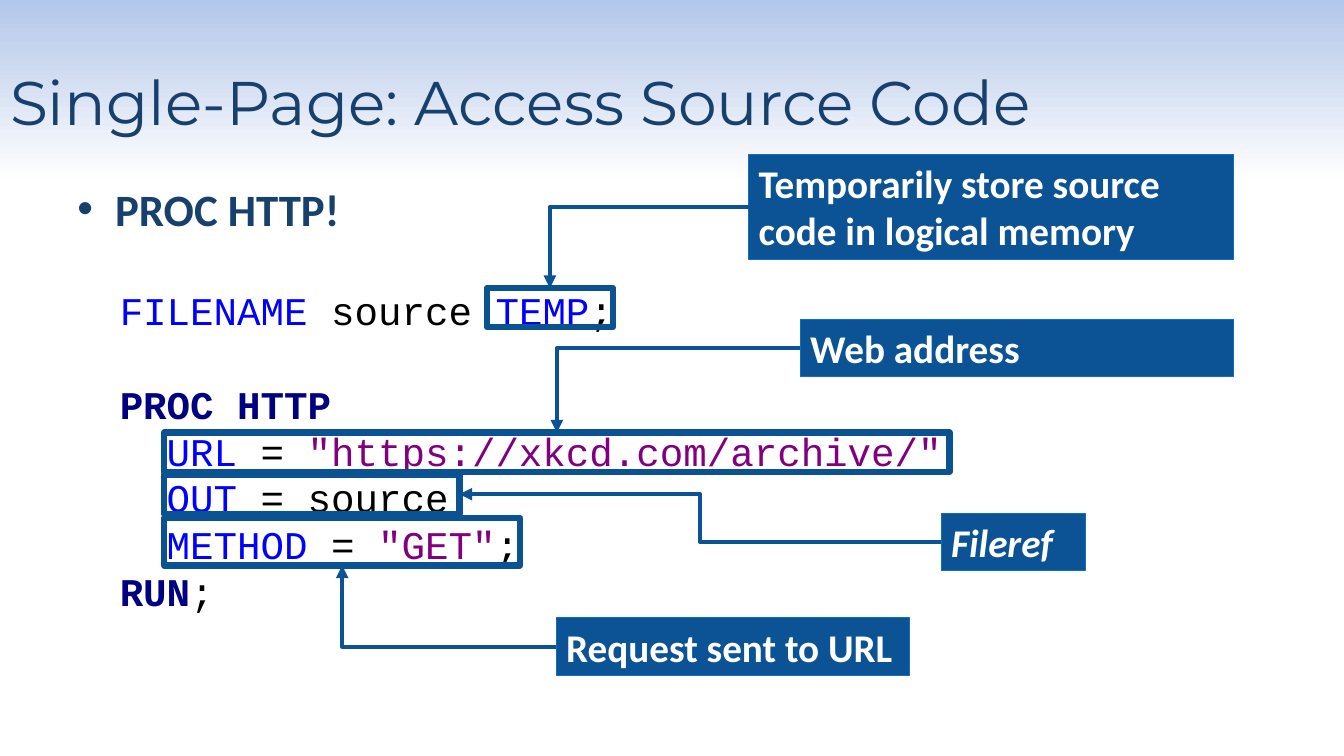
from dataclasses import dataclass

from lxml.etree import SubElement
from pptx import Presentation
from pptx.dml.color import RGBColor as Color
from pptx.enum.shapes import MSO_CONNECTOR as Link, MSO_SHAPE as Shape
from pptx.enum.text import MSO_ANCHOR as Anchor, PP_ALIGN as Align
from pptx.oxml.ns import qn
from pptx.util import Cm, Pt


@dataclass(frozen=True)
class Theme:
    heading_font: str = "Montserrat"
    body_font: str = "Calibri"
    code_font: str = "Courier New"
    heading_size: float = 44
    bullet_size: float = 32
    text_size: float = 28
    code_pitch: float = 33.5
    ink: str = "17406D"
    white: str = "FFFFFF"
    callout: str = "0B5394"
    callout_edge: str = "0F6FC6"
    frame: str = "0B5292"
    keyword: str = "0000FF"
    step: str = "000080"
    plain: str = "000000"
    string: str = "800080"
    sky: tuple = ((0, "B3C7EB"), (5, "C2D1ED"), (24, "FFFFFF"), (100, "FFFFFF"))


THEME = Theme()
TOP, LEFT, BOTTOM, RIGHT = range(4)  # connection sites of a rectangle

# Each code line is a list of (text, colour) spans
CODE = [
    [("FILENAME ", THEME.keyword), ("source ", THEME.plain),
     ("TEMP", THEME.keyword), (";", THEME.plain)],
    [("PROC HTTP", THEME.step)],
    [("  URL ", THEME.keyword), ("= ", THEME.plain),
     ('"https://xkcd.com/archive/"', THEME.string)],
    [("  OUT ", THEME.keyword), ("= source", THEME.plain)],
    [("  METHOD ", THEME.keyword), ("= ", THEME.plain),
     ('"GET"', THEME.string), (";", THEME.plain)],
    [("RUN", THEME.step), (";", THEME.plain)],
]

# Label, label box, code frame (cm), frame side the arrow meets, italic
CALLOUTS = [
    ("Temporarily store source code in logical memory",
     (18.87, 3.89, 12.22, 2.64), (12.27, 7.26, 3.18, 0.99), TOP, False),
    ("Web address",
     (20.17, 8.05, 10.92, 1.45), (4.14, 10.9, 19.79, 0.99), TOP, False),
    ("Fileref",
     (23.72, 12.93, 3.63, 1.45), (4.14, 11.96, 7.44, 0.99), RIGHT, True),
    ("Request sent to URL",
     (14.02, 15.57, 8.89, 1.45), (4.14, 13.06, 8.97, 1.19), BOTTOM, False),
]


def lengths(box):
    return [Cm(value) for value in box]


def add_span(para, text, *, font=THEME.body_font, size=THEME.text_size,
             color=THEME.ink, bold=False, italic=False):
    span = para.add_run()
    span.text = text
    span.font.name, span.font.size = font, Pt(size)
    span.font.bold, span.font.italic = bold, italic
    span.font.color.rgb = Color.from_string(color)


def paint_background(page):
    fill = page.background.fill
    fill.gradient()
    fill.gradient_angle = 270
    stops = page.element.find(".//" + qn("a:gsLst"))
    stops.clear()
    for percent, color in THEME.sky:
        stop = SubElement(stops, qn("a:gs"), pos=str(percent * 1000))
        SubElement(stop, qn("a:srgbClr"), val=color)


def place_title(page, box, text):
    title = page.shapes.title
    title.left, title.top, title.width, title.height = lengths(box)
    title.text_frame.vertical_anchor = Anchor.MIDDLE
    para = title.text_frame.paragraphs[0]
    para.alignment = Align.LEFT
    add_span(para, text, font=THEME.heading_font, size=THEME.heading_size)


def add_text_frame(page, box):
    frame = page.shapes.add_textbox(*lengths(box)).text_frame
    frame.word_wrap = True
    return frame


def add_bullet(page, box, text):
    para = add_text_frame(page, box).paragraphs[0]
    indent = Cm(0.95)
    props = para._p.get_or_add_pPr()
    props.set("marL", str(indent))
    props.set("indent", str(-indent))
    SubElement(props, qn("a:buFont"), typeface="Arial")
    SubElement(props, qn("a:buChar"), char="•")
    add_span(para, text, size=THEME.bullet_size, bold=True)


def add_code(page, box, lines):
    frame = add_text_frame(page, box)
    for index, line in enumerate(lines):
        para = frame.add_paragraph() if index else frame.paragraphs[0]
        para.line_spacing = Pt(THEME.code_pitch)
        if index == 1:  # gap between the two statements
            para.space_before = Pt(THEME.code_pitch)
        for text, color in line:
            add_span(para, text, font=THEME.code_font, color=color,
                     bold=color == THEME.step)


def add_rectangle(page, box, *, edge, width, fill=None):
    shape = page.shapes.add_shape(Shape.RECTANGLE, *lengths(box))
    shape.shadow.inherit = False
    shape.line.color.rgb = Color.from_string(edge)
    shape.line.width = Pt(width)
    if fill:
        shape.fill.solid()
        shape.fill.fore_color.rgb = Color.from_string(fill)
    else:
        shape.fill.background()
    return shape


def add_arrow(page, label, target, side):
    ends = {TOP: (target.left + target.width // 2, target.top),
            BOTTOM: (target.left + target.width // 2, target.top + target.height),
            RIGHT: (target.left + target.width, target.top + target.height // 2)}
    arrow = page.shapes.add_connector(
        Link.ELBOW, label.left, label.top + label.height // 2, *ends[side])
    arrow.begin_connect(label, LEFT)
    arrow.end_connect(target, side)
    arrow.line.color.rgb = Color.from_string(THEME.callout)
    arrow.line.width = Pt(3)
    props = arrow.element.spPr
    if side != RIGHT:  # a single bend
        props.find(qn("a:prstGeom")).set("prst", "bentConnector2")
    SubElement(props.find(qn("a:ln")), qn("a:tailEnd"), type="triangle")
    SubElement(props, qn("a:effectLst"))


def add_callout(page, text, label_box, frame_box, side, italic):
    label = add_rectangle(page, label_box, edge=THEME.callout_edge, width=0.75,
                          fill=THEME.callout)
    label.text_frame.word_wrap = True
    label.text_frame.vertical_anchor = Anchor.TOP
    para = label.text_frame.paragraphs[0]
    para.alignment = Align.LEFT
    add_span(para, text, color=THEME.white, bold=True, italic=italic)
    target = add_rectangle(page, frame_box, edge=THEME.frame, width=4.5)
    add_arrow(page, label, target, side)


def main():
    deck = Presentation()
    deck.slide_width, deck.slide_height = Cm(33.87), Cm(19.05)
    page = deck.slides.add_slide(deck.slide_layouts.get_by_name("Title Only"))

    # Background and heading
    paint_background(page)
    place_title(page, (0, 1.27, 31.9, 2.54), "Single-Page: Access Source Code")

    # Bullet and program
    add_bullet(page, (1.7, 4.45, 30.48, 12.57), "PROC HTTP!")
    add_code(page, (2.77, 7.09, 21.41, 8.64), CODE)

    # Explanations of the framed code
    for callout in CALLOUTS:
        add_callout(page, *callout)

    deck.save("out.pptx")


if __name__ == "__main__":
    main()
